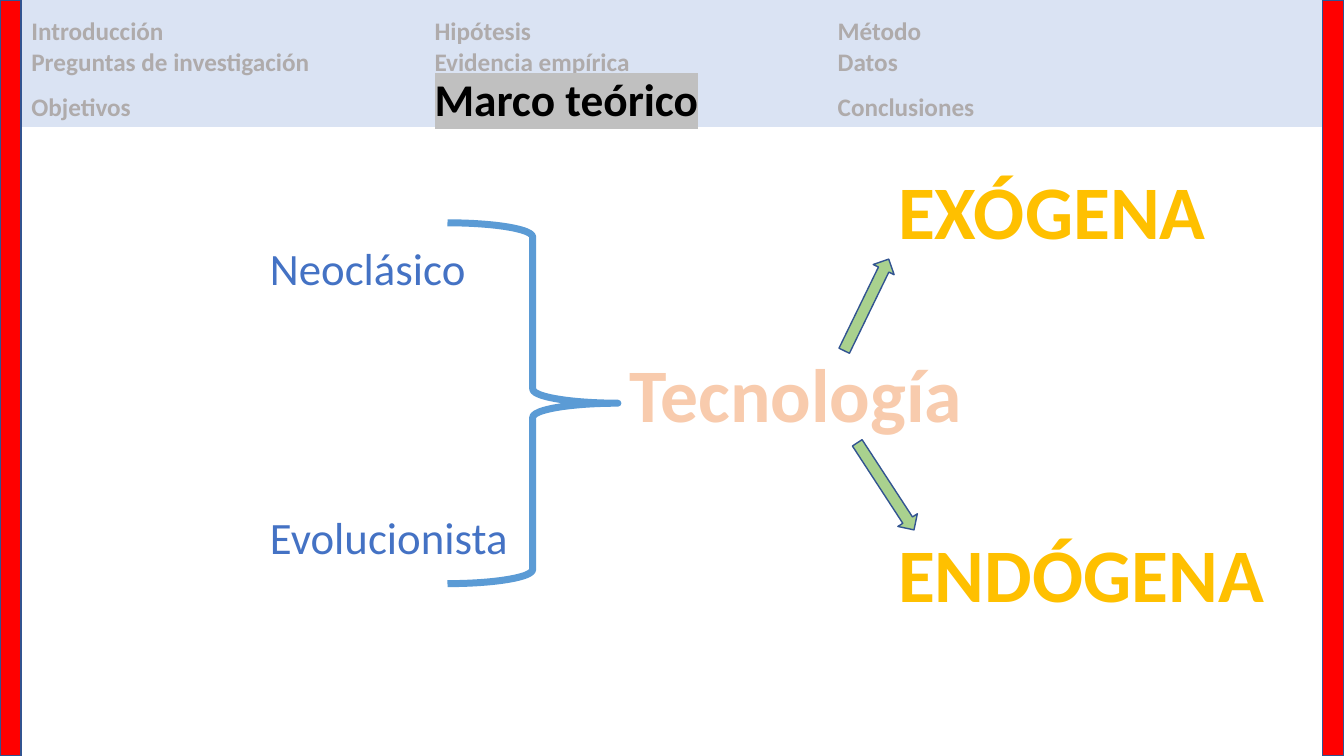
from dataclasses import dataclass

from lxml import etree
from pptx import Presentation
from pptx.dml.color import RGBColor
from pptx.enum.shapes import MSO_SHAPE
from pptx.enum.text import MSO_ANCHOR, MSO_AUTO_SIZE, PP_ALIGN
from pptx.oxml.ns import qn
from pptx.util import Inches, Pt

RECTANGLE, ARROW, BRACE = MSO_SHAPE.RECTANGLE, MSO_SHAPE.RIGHT_ARROW, MSO_SHAPE.RIGHT_BRACE
LEFT, CENTER = PP_ALIGN.LEFT, PP_ALIGN.CENTER
MIDDLE, NO_FIT = MSO_ANCHOR.MIDDLE, MSO_AUTO_SIZE.NONE
GROW = MSO_AUTO_SIZE.SHAPE_TO_FIT_TEXT

RED = RGBColor(0xFF, 0x00, 0x00)
NAVY = RGBColor(0x32, 0x54, 0x91)
BLUE = RGBColor(0x44, 0x72, 0xC4)
SKY = RGBColor(0x5B, 0x9B, 0xD5)
PALE_BLUE = RGBColor(0xDA, 0xE3, 0xF3)
PEACH = RGBColor(0xF8, 0xCB, 0xAD)
ORANGE = RGBColor(0xED, 0x7D, 0x31)
GREEN = RGBColor(0xA9, 0xD1, 0x8E)
GOLD = RGBColor(0xFF, 0xC0, 0x00)
GRAY = RGBColor(0xAF, 0xAB, 0xAB)
SILVER = RGBColor(0xC0, 0xC0, 0xC0)
BLACK = RGBColor(0x00, 0x00, 0x00)

FONT = "Calibri"
WIDTH, HEIGHT = Inches(13.333), Inches(7.5)
EDGE = 1.58
SECTION_SIZE, CURRENT_SIZE = 18, 32.4
SECTION_TABS = (30, 60)
SECTIONS = (
    ("Introducción", "Hipótesis", "Método"),
    ("Preguntas de investigación", "Evidencia empírica", "Datos"),
    ("Objetivos", "Marco teórico", "Conclusiones"),
)
CURRENT_SECTION = "Marco teórico"


@dataclass(frozen=True)
class Box:
    """Left, top, width and height in percent of the slide."""
    left: float
    top: float
    width: float
    height: float

    def lengths(self) -> tuple:
        return (across(self.left), down(self.top), across(self.width), down(self.height))


@dataclass(frozen=True)
class Figure:
    kind: MSO_SHAPE
    box: Box
    fill: RGBColor | None
    line: RGBColor
    weight: float = 1
    rotation: float = 0


@dataclass(frozen=True)
class Concept:
    text: str
    box: Box
    color: RGBColor
    outline: RGBColor | None = None


FIGURES = (
    Figure(RECTANGLE, Box(0, 0, EDGE, 100), RED, NAVY),
    Figure(RECTANGLE, Box(100 - EDGE, 0, EDGE, 100), RED, NAVY),
    Figure(ARROW, Box(60.68, 38.8, 7.58, 3.07), GREEN, NAVY, rotation=295.9),
    Figure(ARROW, Box(62.03, 62.8, 7.73, 3.07), GREEN, NAVY, rotation=56.9),
    Figure(BRACE, Box(33.3, 29.47, 12.68, 47.73), None, SKY, weight=5),
)
CONCEPTS = (
    Concept("Tecnología", Box(45.98, 45.2, 26.48, 13.47), PEACH, ORANGE),
    Concept("EXÓGENA", Box(65.93, 21.07, 24.68, 13.47), GOLD),
    Concept("ENDÓGENA", Box(65.93, 69.07, 29.03, 13.47), GOLD),
)
HEADER = Box(EDGE, 0, 100 - 2 * EDGE, 16.8)
SCHOOLS = Box(19.35, 31.2, 19.43, 44.4)


def across(share: float) -> int:
    return round(WIDTH * share / 100)


def down(share: float) -> int:
    return round(HEIGHT * share / 100)


def add_run(paragraph, text: str, *, size: float, color: RGBColor, bold: bool = False,
            highlight: RGBColor | None = None, outline: RGBColor | None = None) -> None:
    run = paragraph.add_run()
    run.text = text
    font = run.font
    font.size, font.bold = Pt(size), bold
    font.color.rgb = color
    properties = run._r.get_or_add_rPr()
    if highlight is not None:
        mark = etree.SubElement(properties, qn("a:highlight"))
        etree.SubElement(mark, qn("a:srgbClr"), val=str(highlight))
    font.name = FONT
    if outline is not None:
        line = etree.Element(qn("a:ln"), w=str(Pt(1.75)))
        solid = etree.SubElement(line, qn("a:solidFill"))
        etree.SubElement(solid, qn("a:srgbClr"), val=str(outline))
        properties.insert(0, line)


def add_figure(slide, figure: Figure) -> None:
    shape = slide.shapes.add_shape(figure.kind, *figure.box.lengths())
    shape.shadow.inherit = False
    shape.rotation = figure.rotation
    if figure.fill is None:
        shape.fill.background()
    else:
        shape.fill.solid()
        shape.fill.fore_color.rgb = figure.fill
    shape.line.color.rgb = figure.line
    shape.line.width = Pt(figure.weight)


def add_text_frame(slide, box: Box):
    frame = slide.shapes.add_textbox(*box.lengths()).text_frame
    frame.word_wrap = False
    frame.auto_size = GROW
    return frame


def add_concept(slide, concept: Concept) -> None:
    paragraph = add_text_frame(slide, concept.box).paragraphs[0]
    paragraph.alignment = CENTER
    add_run(paragraph, concept.text, size=54, color=concept.color, bold=True,
            outline=concept.outline)


def add_schools(slide) -> None:
    frame = add_text_frame(slide, SCHOOLS)
    neoclassical, evolutionary = frame.paragraphs[0], frame.add_paragraph()
    add_run(neoclassical, "Neoclásico", size=32, color=BLUE)
    add_run(evolutionary, "Evolucionista", size=32, color=BLUE)
    evolutionary.space_before = Pt(154)


def fill_header(title) -> None:
    """Set the section names in three tabbed columns, with the current one marked."""
    title.left, title.top, title.width, title.height = HEADER.lengths()
    title.fill.solid()
    title.fill.fore_color.rgb = PALE_BLUE
    frame = title.text_frame
    frame.word_wrap = True
    frame.auto_size = NO_FIT
    frame.vertical_anchor = MIDDLE
    paragraph = frame.paragraphs[0]
    paragraph.alignment = LEFT
    paragraph.line_spacing = 0.9
    stops = etree.SubElement(paragraph._p.get_or_add_pPr(), qn("a:tabLst"))
    for share in SECTION_TABS:
        etree.SubElement(stops, qn("a:tab"), pos=str(across(share)), algn="l")
    for row, names in enumerate(SECTIONS):
        if row:
            paragraph.add_line_break()
        tab_size = SECTION_SIZE if row else CURRENT_SIZE
        for column, name in enumerate(names):
            if column:
                add_run(paragraph, "\t", size=tab_size, color=GRAY, bold=True)
            if name == CURRENT_SECTION:
                add_run(paragraph, name, size=CURRENT_SIZE, color=BLACK, bold=True,
                        highlight=SILVER)
            else:
                add_run(paragraph, name, size=SECTION_SIZE, color=GRAY, bold=True)


def main() -> None:
    deck = Presentation()
    deck.slide_width, deck.slide_height = WIDTH, HEIGHT
    slide = deck.slides.add_slide(deck.slide_layouts.get_by_name("Title Only"))
    fill_header(slide.shapes.title)
    for figure in FIGURES:
        add_figure(slide, figure)
    add_schools(slide)
    for concept in CONCEPTS:
        add_concept(slide, concept)
    deck.save("out.pptx")


if __name__ == "__main__":
    main()
